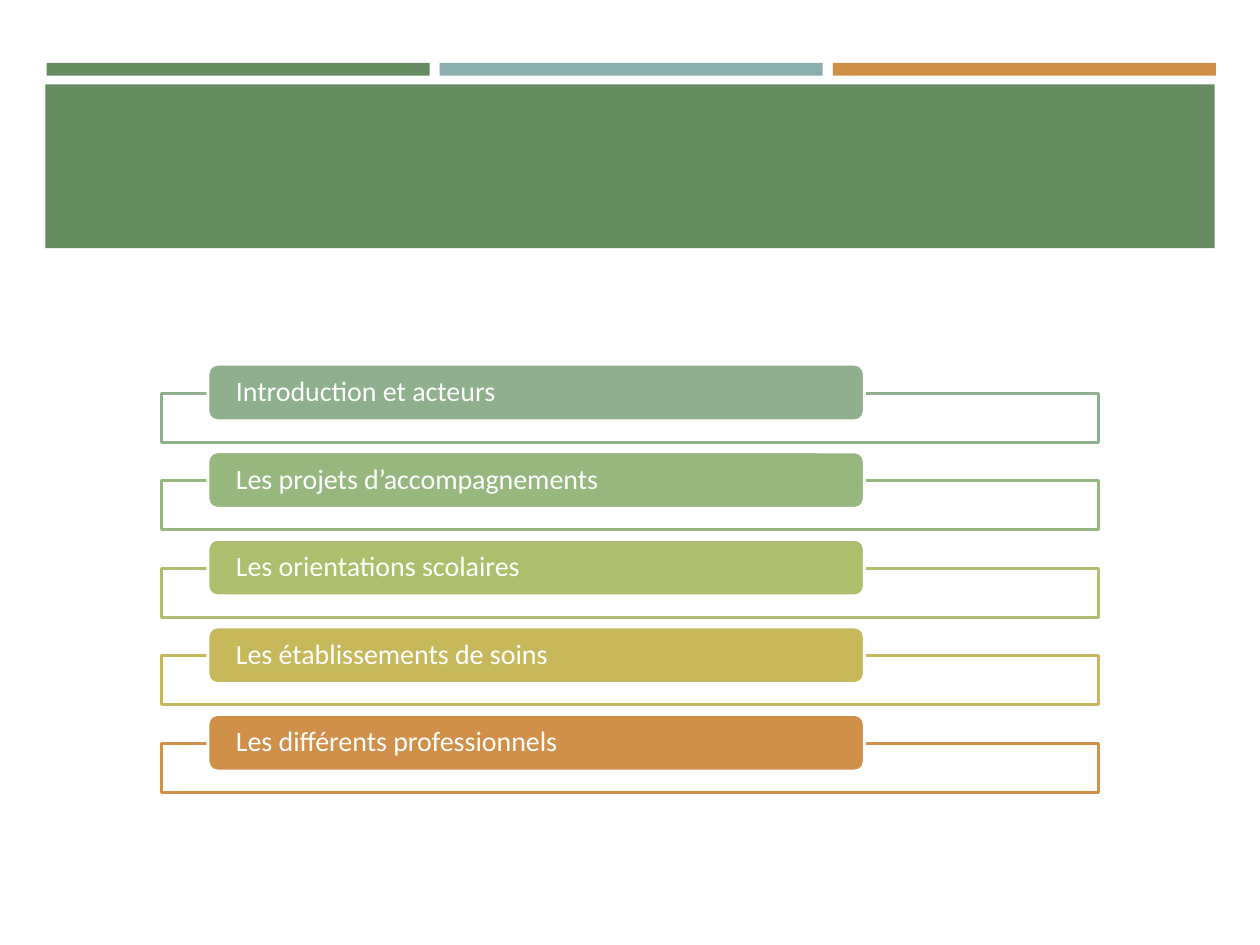
from dataclasses import dataclass

from pptx import Presentation
from pptx.dml.color import RGBColor
from pptx.enum.shapes import MSO_SHAPE
from pptx.enum.text import MSO_ANCHOR, PP_ALIGN
from pptx.util import Inches, Pt

RECTANGLE = MSO_SHAPE.RECTANGLE
ROUNDED = MSO_SHAPE.ROUNDED_RECTANGLE
MIDDLE = MSO_ANCHOR.MIDDLE
LEFT = PP_ALIGN.LEFT


@dataclass(frozen=True)
class Theme:
    green: str = "648C60"
    blue: str = "8CADAE"
    orange: str = "D19049"
    white: str = "FFFFFF"
    chapters: tuple = ("8FB08C", "96B77D", "ADBF6C", "C7B95B", "D19049")
    font: str = "Calibri"
    text_size: float = 16
    line_width: float = 1.75


theme = Theme()

CHAPTERS = (
    "Introduction et acteurs",
    "Les projets d’accompagnements",
    "Les orientations scolaires",
    "Les établissements de soins",
    "Les différents professionnels",
)
FIRST_FRAME_TOP = 3.12
LAST_FRAME_TOP = 5.9
LABEL_RISE = 0.23


def add_box(slide, kind, left, top, width, height, fill, line=None):
    """Add a flat shape, measured in inches, without an outline unless line is given."""
    shape = slide.shapes.add_shape(
        kind, Inches(left), Inches(top), Inches(width), Inches(height)
    )
    shape.shadow.inherit = False
    shape.fill.solid()
    shape.fill.fore_color.rgb = RGBColor.from_string(fill)
    if line:
        shape.line.color.rgb = RGBColor.from_string(line)
        shape.line.width = Pt(theme.line_width)
    else:
        shape.line.fill.background()
    return shape


presentation = Presentation()
presentation.slide_width = Inches(10)
presentation.slide_height = Inches(7.5)
slide = presentation.slides.add_slide(presentation.slide_layouts[6])

# Header: three stripes above a wide band
for index, color in enumerate((theme.green, theme.blue, theme.orange)):
    add_box(slide, RECTANGLE, 0.37 + index * 3.12, 0.5, 3.04, 0.1, color)
add_box(slide, RECTANGLE, 0.36, 0.67, 9.28, 1.3, theme.green)

# Chapter list: an outlined frame with a label over its top edge
pitch = (LAST_FRAME_TOP - FIRST_FRAME_TOP) / (len(CHAPTERS) - 1)
for index, (chapter, color) in enumerate(zip(CHAPTERS, theme.chapters)):
    top = FIRST_FRAME_TOP + index * pitch
    add_box(slide, RECTANGLE, 1.28, top, 7.44, 0.39, theme.white, color)
    label = add_box(
        slide, ROUNDED, 1.65, top - LABEL_RISE, 5.21, 0.45, color, theme.white
    )
    text_frame = label.text_frame
    text_frame.text = chapter
    text_frame.word_wrap = True
    text_frame.vertical_anchor = MIDDLE
    text_frame.margin_left = text_frame.margin_right = Inches(0.2)
    text_frame.margin_top = text_frame.margin_bottom = 0
    paragraph = text_frame.paragraphs[0]
    paragraph.alignment = LEFT
    paragraph.line_spacing = 0.9
    font = paragraph.runs[0].font
    font.name = theme.font
    font.size = Pt(theme.text_size)
    font.color.rgb = RGBColor.from_string(theme.white)

presentation.save("out.pptx")
